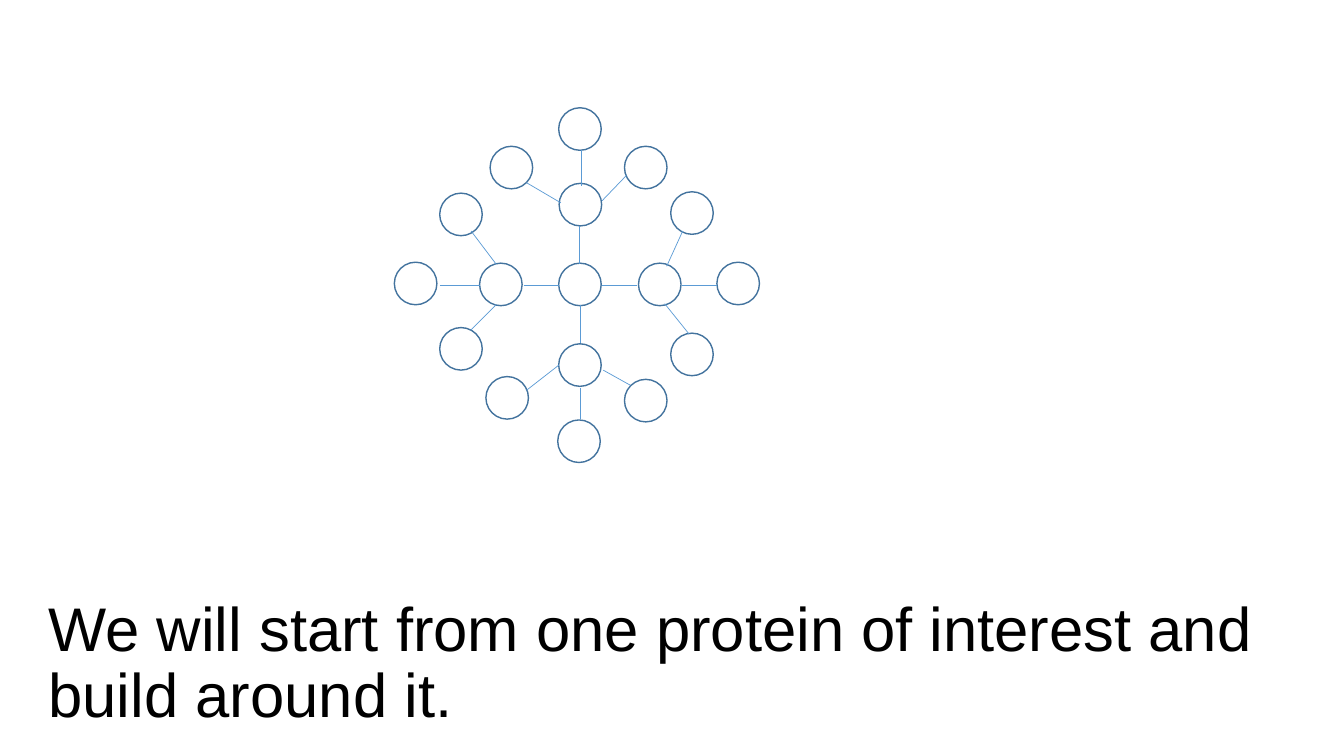
from pptx import Presentation
from pptx.dml.color import RGBColor
from pptx.enum import shapes, text
from pptx.oxml import ns
from pptx.util import Pt
from lxml import etree

BLACK = RGBColor(0x00, 0x00, 0x00)
NODE_BLUE = RGBColor(0x43, 0x73, 0x9E)
LINK_BLUE = RGBColor(0x5B, 0x9B, 0xD5)

DIAMETER = 30.4

# Offsets in points from the centre of the network.
# Each branch: hub, link to the core, then (leaf, link to the hub) pairs.
BRANCHES = [
    # Right
    ((57, 0), (15.8, 0.7, 41, 0.7), [
        ((80, -51), (61.9, -13, 73.4, -38.2)),
        ((113, -0.7), (72.7, 0.7, 97.9, 0.7)),
        ((80, 50), (60.5, 13.7, 77.8, 35.3))]),
    # Bottom
    ((0, 57.6), (0, 14.4, 0, 41.8), [
        ((47, 83), (36, 72, 16.6, 61.2)),
        ((-0.7, 112), (0, 74.2, 0, 95.8)),
        ((-52, 81), (-15.1, 57.6, -38.2, 75.6))]),
    # Left
    ((-56.5, 0), (-40.3, 0.7, -15.1, 0.7), [
        ((-85, 46), (-77.8, 32.4, -59.8, 14.4)),
        ((-117.4, -0.7), (-100, 0.3, -71.3, 0.3)),
        ((-85, -50), (-77.8, -38.2, -59.8, -14.4))]),
    # Top
    ((0.3, -57), (-0.7, -41.8, -0.7, -14.4), [
        ((-49, -83.5), (-38.2, -72.7, -13.7, -58.3)),
        ((0, -111), (0.7, -95.8, 0.7, -70.6)),
        ((47, -83.5), (15.8, -59.8, 33.1, -77.8))]),
]


def add_title(slide, left, top, width, height):
    title = slide.shapes.title
    title.left, title.top = Pt(left), Pt(top)
    title.width, title.height = Pt(width), Pt(height)
    frame = title.text_frame
    frame.text = "We will start from one protein of interest and build around it."
    frame.word_wrap = True
    frame.auto_size = text.MSO_AUTO_SIZE.NONE
    frame.vertical_anchor = text.MSO_ANCHOR.MIDDLE
    sentence = frame.paragraphs[0]
    sentence.alignment = text.PP_ALIGN.LEFT
    sentence.line_spacing = 0.9
    font = sentence.runs[0].font
    font.name, font.size = "Arial", Pt(44)
    font.color.rgb = BLACK


def add_protein(slide, x, y):
    protein = slide.shapes.add_shape(
        shapes.MSO_SHAPE.OVAL, Pt(x - DIAMETER / 2), Pt(y - DIAMETER / 2),
        Pt(DIAMETER), Pt(DIAMETER))
    protein.shadow.inherit = False
    protein.fill.background()
    protein.line.color.rgb = NODE_BLUE
    protein.line.width = Pt(1)


def add_link(slide, x1, y1, x2, y2):
    link = slide.shapes.add_connector(
        shapes.MSO_CONNECTOR.STRAIGHT, Pt(x1), Pt(y1), Pt(x2), Pt(y2))
    link.line.color.rgb = LINK_BLUE
    link.line.width = Pt(0.5)
    etree.SubElement(link.element.spPr, ns.qn("a:effectLst"))


def add_network(slide, left, top, width, height):
    cx, cy = left + width / 2, top + height / 2

    # Core protein, hubs and leaves
    proteins = [(0, 0)]
    links = []
    for hub, spoke, leaves in BRANCHES:
        proteins += [hub] + [leaf for leaf, _ in leaves]
        links += [spoke] + [link for _, link in leaves]
    for dx, dy in proteins:
        add_protein(slide, cx + dx, cy + dy)

    # Interactions
    for x1, y1, x2, y2 in links:
        add_link(slide, cx + x1, cy + y1, cx + x2, cy + y2)


def main():
    deck = Presentation()
    deck.slide_width, deck.slide_height = Pt(960), Pt(540)
    slide = deck.slides.add_slide(deck.slide_layouts[5])
    add_title(slide, 27.4, 422.6, 905, 104.4)
    add_network(slide, 281.5, 76.4, 265.6, 253.6)
    deck.save("out.pptx")


if __name__ == "__main__":
    main()
